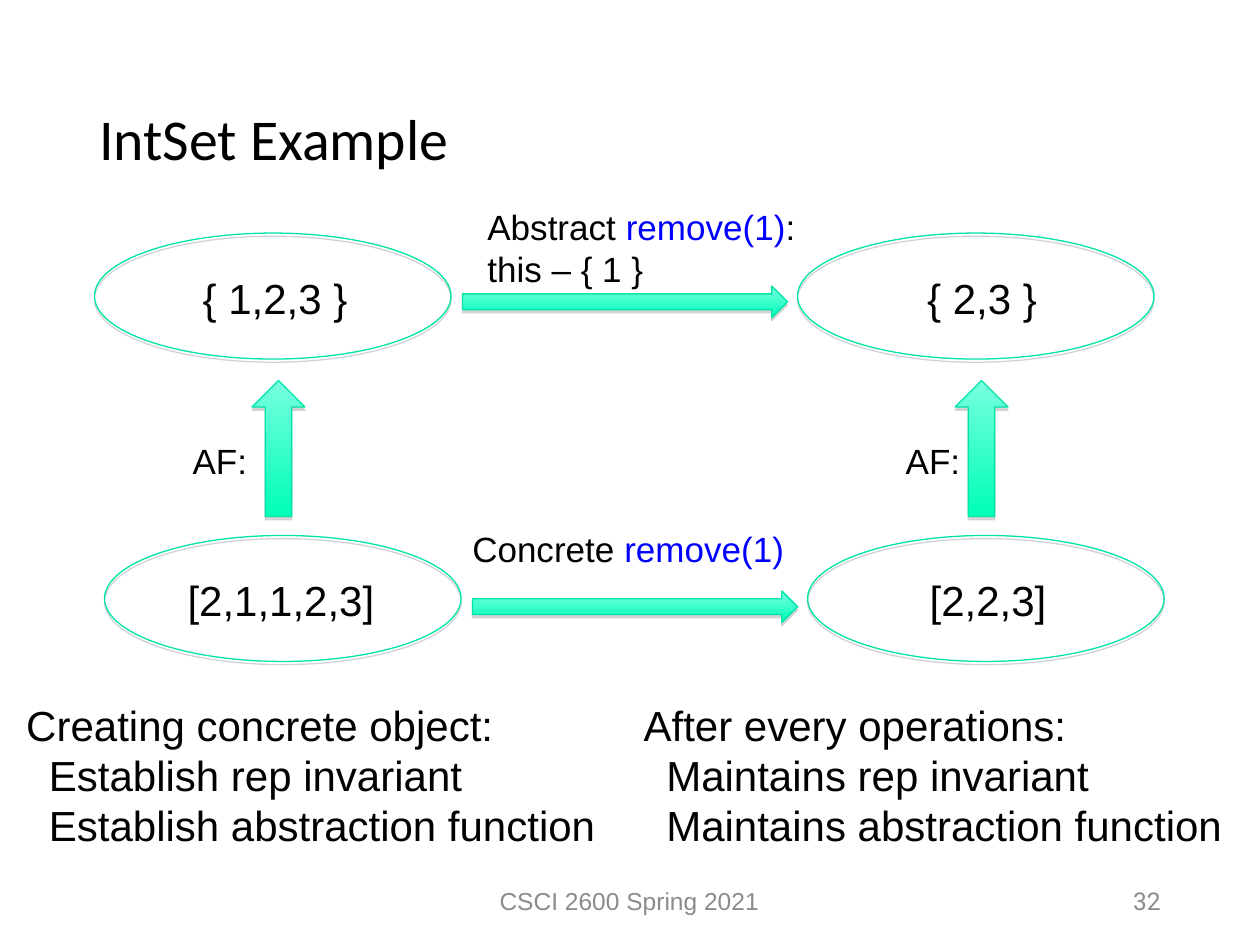
import pptx
import pptx.dml.color
import pptx.enum.shapes
import pptx.enum.text
import pptx.oxml
import pptx.oxml.ns
import pptx.util
from lxml import etree

SHAPES = pptx.enum.shapes.MSO_SHAPE
ALIGN = pptx.enum.text.PP_ALIGN
ANCHOR = pptx.enum.text.MSO_ANCHOR

BLACK, BLUE, GREY = "000000", "0000FF", "8B8B8B"
OUTLINE, LIGHT, STRONG = "00E4A7", "77FFE0", "00FFB8"

# Diagram grid in inches: the concrete row sits slightly right of the abstract row
COLUMN_STEP = 5.58
ABSTRACT_LEFT, ABSTRACT_TOP = 0.75, 1.85
CONCRETE_LEFT, CONCRETE_TOP = 0.83, 4.25
STATE_WIDTH, STATE_HEIGHT = 2.83, 1
ARROW_OFFSET = 2.92
LABEL_WIDTH = 2.8
BLOCK_WIDTH = 4.95


def color(hex_string):
    return pptx.dml.color.RGBColor.from_string(hex_string)


def inches(*values):
    return [pptx.util.Inches(value) for value in values]


def add_text(slide, box, lines, size, font="Arial", align=ALIGN.LEFT,
             anchor=ANCHOR.TOP, indent=0):
    """Each line is a list of (text, colour) runs; later lines are indented."""
    text_frame = slide.shapes.add_textbox(*inches(*box)).text_frame
    text_frame.word_wrap = True
    text_frame.vertical_anchor = anchor
    for index, runs in enumerate(lines):
        paragraph = text_frame.add_paragraph() if index else text_frame.paragraphs[0]
        paragraph.alignment = align
        if index and indent:
            margin = pptx.util.Inches(indent)
            paragraph._p.get_or_add_pPr().set("marL", str(margin))
        for text, hex_string in runs:
            run = paragraph.add_run()
            run.text = text
            run.font.name = font
            run.font.size = pptx.util.Pt(size)
            run.font.color.rgb = color(hex_string)
    return text_frame


def add_shadow(shape):
    shape.shadow.inherit = False
    effects = shape._element.spPr.find(pptx.oxml.ns.qn("a:effectLst"))
    shadow = etree.SubElement(effects, pptx.oxml.ns.qn("a:outerShdw"), blurRad="0",
                              dist=str(pptx.util.Pt(1.8)), dir="5400000", rotWithShape="0")
    tone = etree.SubElement(shadow, pptx.oxml.ns.qn("a:srgbClr"), val="808080")
    etree.SubElement(tone, pptx.oxml.ns.qn("a:alpha"), val="35000")


def add_outlined(slide, kind, box):
    shape = slide.shapes.add_shape(kind, *inches(*box))
    shape.line.color.rgb = color(OUTLINE)
    shape.line.width = pptx.util.Pt(0.75)
    add_shadow(shape)
    return shape


def add_state(slide, left, top, text, text_left, text_width):
    ellipse = add_outlined(slide, SHAPES.OVAL, (left, top, STATE_WIDTH, STATE_HEIGHT))
    ellipse.fill.background()
    add_text(slide, (text_left, top + 0.26, text_width, 0.5), [[(text, BLACK)]], 24)


def add_arrow(slide, kind, box):
    arrow = add_outlined(slide, kind, box)
    arrow.fill.gradient()
    arrow.fill.gradient_angle = 270
    for stop, position, hex_string in zip(arrow.fill.gradient_stops, (0, 1), (LIGHT, STRONG)):
        stop.position = position
        stop.color.rgb = color(hex_string)


def add_obligations(slide, left, lines):
    add_text(slide, (left, 5.5, BLOCK_WIDTH, 1.3), [[(line, BLACK)] for line in lines],
             24, indent=0.18)


def main():
    presentation = pptx.Presentation()
    presentation.slide_width, presentation.slide_height = inches(10, 7.5)
    slide = presentation.slides.add_slide(presentation.slide_layouts[6])

    # Title and footer
    title = add_text(slide, (0.69, 0.4, 8.62, 1.45), [[("IntSet Example", BLACK)]], 33,
                     "Calibri", anchor=ANCHOR.MIDDLE)
    title.paragraphs[0].line_spacing = 0.9
    add_text(slide, (3.31, 6.95, 3.37, 0.4), [[("CSCI 2600 Spring 2021", GREY)]], 14,
             align=ALIGN.CENTER, anchor=ANCHOR.MIDDLE)
    add_text(slide, (7.06, 6.95, 2.25, 0.4), [[("32", GREY)]], 14, "Roboto",
             align=ALIGN.RIGHT, anchor=ANCHOR.MIDDLE)

    # States before and after the operation
    for left, top, before, after in (
        (ABSTRACT_LEFT, ABSTRACT_TOP, ("{ 1,2,3 }", 1.51, 1.5), ("{ 2,3 }", 7.26, 1.2)),
        (CONCRETE_LEFT, CONCRETE_TOP, ("[2,1,1,2,3]", 1.39, 1.8), ("[2,2,3]", 7.28, 1.25)),
    ):
        add_state(slide, left, top, *before)
        add_state(slide, left + COLUMN_STEP, top, *after)

    # Abstraction function arrows
    for arrow_left, label_left in ((2, 1.43), (2 + COLUMN_STEP, 7.09)):
        add_arrow(slide, SHAPES.UP_ARROW, (arrow_left, 3.02, 0.42, 1.08))
        add_text(slide, (label_left, 3.44, 0.7, 0.43), [[("AF:", BLACK)]], 20)

    # Operation arrows and labels
    for left, top in ((ABSTRACT_LEFT, 2.27), (CONCRETE_LEFT, 4.69)):
        add_arrow(slide, SHAPES.RIGHT_ARROW, (left + ARROW_OFFSET, top, 2.58, 0.25))
    add_text(slide, (3.77, 1.58, LABEL_WIDTH, 0.77),
             [[("Abstract ", BLACK), ("remove(1)", BLUE), (":", BLACK)],
              [("this – { 1 }", BLACK)]], 20)
    add_text(slide, (3.65, 4.14, LABEL_WIDTH, 0.43),
             [[("Concrete ", BLACK), ("remove(1)", BLUE)]], 20)

    # Obligations
    add_obligations(slide, 0.11, ("Creating concrete object:",
                                  "Establish rep invariant",
                                  "Establish abstraction function"))
    add_obligations(slide, 5.01, ("After every operations:",
                                  "Maintains rep invariant",
                                  "Maintains abstraction function"))

    presentation.save("out.pptx")


if __name__ == "__main__":
    main()
